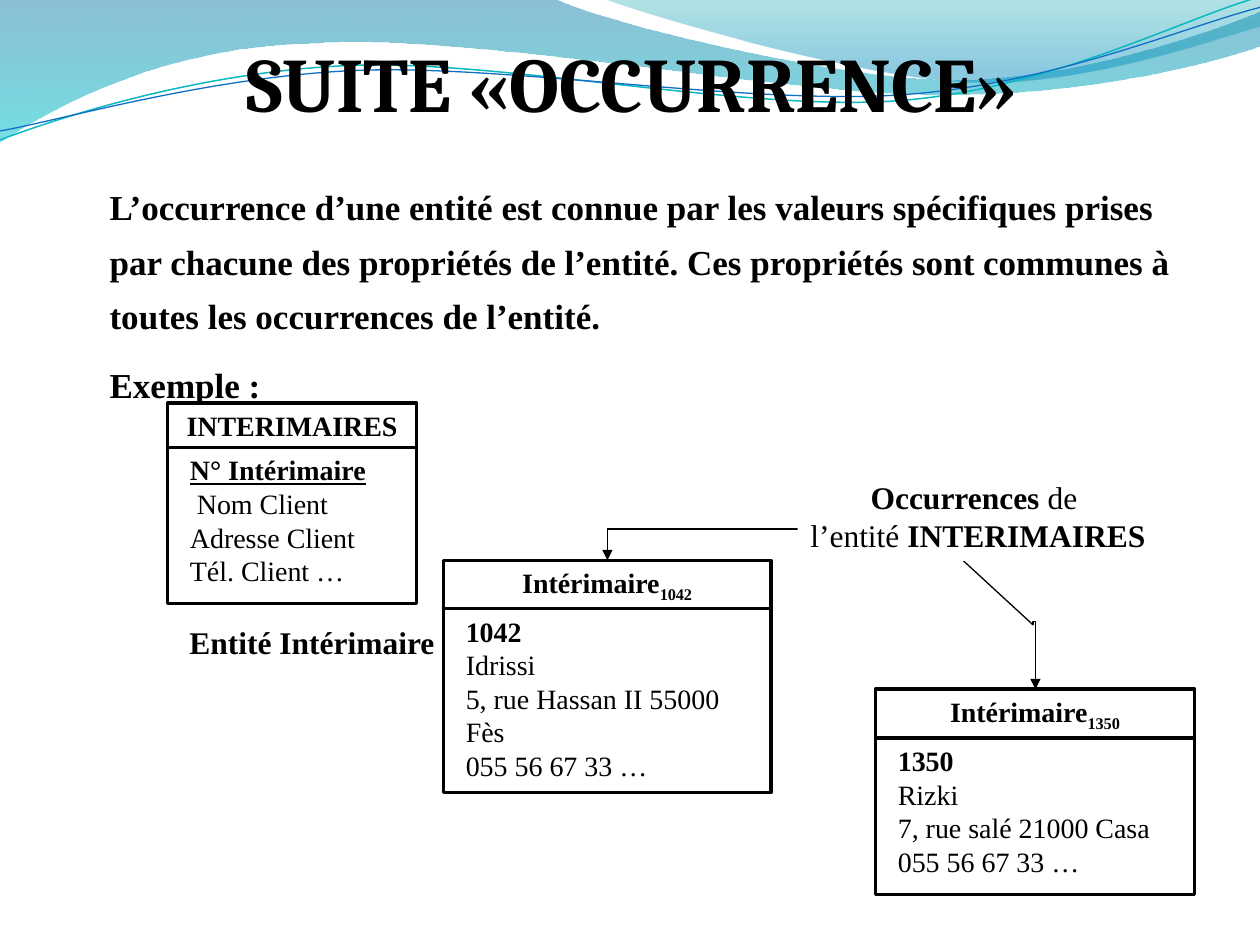
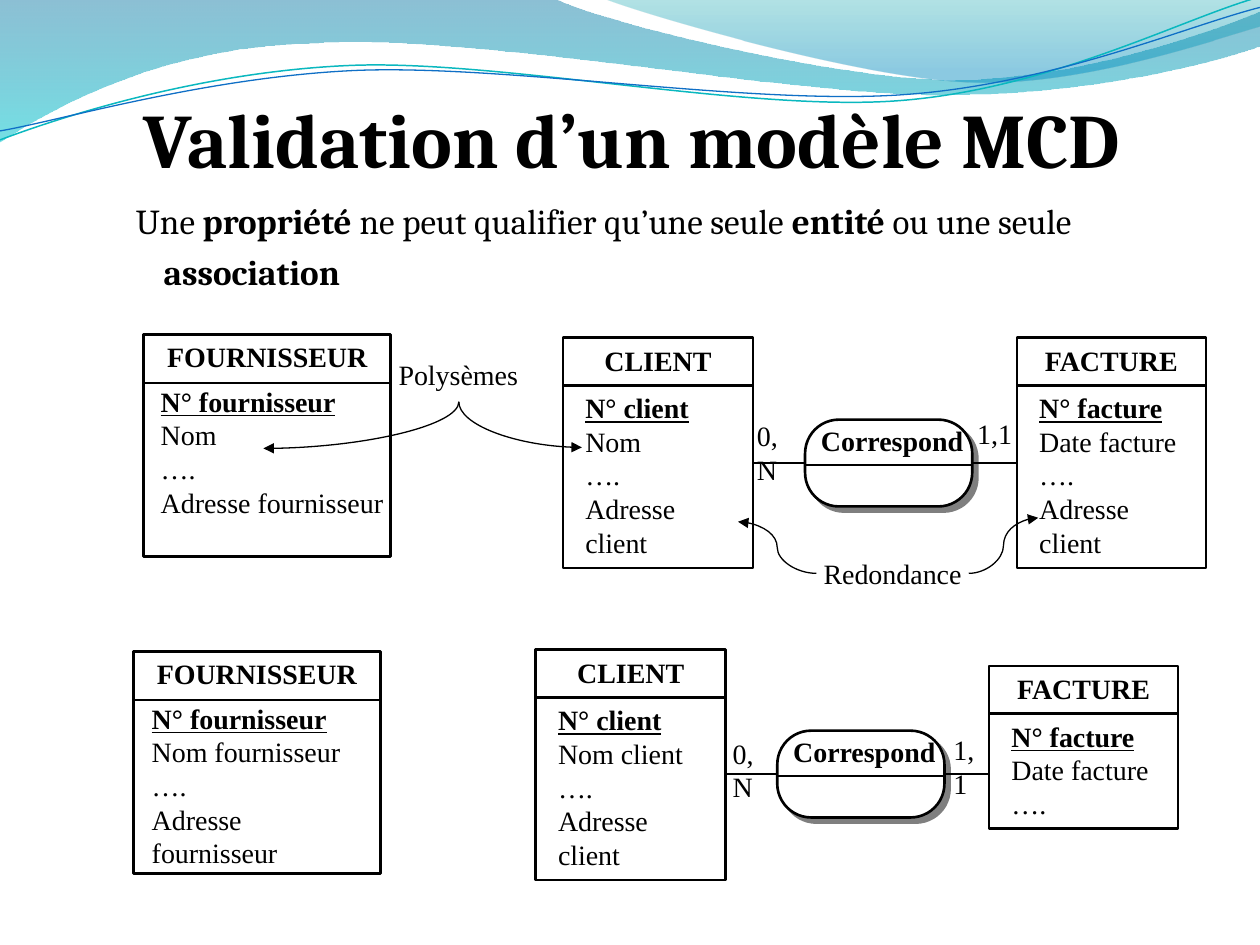
from math import cos, radians, sin
from lxml.etree import SubElement
from pptx import Presentation
from pptx.dml.color import RGBColor
from pptx.enum.shapes import MSO_CONNECTOR as Link, MSO_SHAPE as Preset
from pptx.enum.text import MSO_ANCHOR as Anchor, PP_ALIGN as Align
from pptx.oxml.ns import qn
from pptx.util import Cm, Pt

BLACK, WHITE = "000000", "FFFFFF"
SERIF, TITLE_FONT = "Times New Roman", "Cambria"
ROW_INDENT = (0.23, 0)
WAVE_TILT = 2.7

BANDS = [
    {"stops": [(0, "0074A1", 45), (1, "00C6CF", 55)], "start": (0, 0), "parts": [
        [(11.18, -0.03)],
        [(12.09, 0.43), (16.87, 1.6), (19.25, 1.6)],
        [(21.67, 1.6), (24.33, 0.66), (25.4, 0.23)],
        [(25.43, 0.91)],
        [(24.97, 1.12), (22.1, 1.93), (18.95, 1.91)],
        [(15.8, 1.91), (9.7, 0.71), (6.53, 0.86)],
        [(3.28, 0.91), (1.17, 2.11), (-0.03, 2.87)],
        [(0, 0)]]},
    {"stops": [(0, "00A1A9", 30), (0.8, "008BBF", 45)], "start": (12.17, -0.03), "parts": [
        [(12.93, 0.28), (17.32, 1.57), (19.53, 1.65)],
        [(21.74, 1.75), (24.41, 0.81), (25.4, 0.53)],
        [(25.4, 0)],
        [(12.17, -0.03)]]},
    {"line": ("0AB8BF", 0.85), "pivot": (12.67, 1.46), "start": (0, 2.82), "parts": [
        [(1.22, 2.36), (4.01, 1.45), (7.04, 1.32)],
        [(10.03, 1.19), (15.06, 2.26), (18.11, 2.03)],
        [(21.16, 1.8), (23.83, 0.38), (25.35, -0.05)]]},
    {"line": ("0F6FC6", 0.75), "pivot": (12.69, 1.5), "start": (0, 2.64), "parts": [
        [(1.19, 2.44), (4.17, 1.55), (7.19, 1.42)],
        [(10.24, 1.3), (15.16, 2.13), (18.21, 1.91)],
        [(21.23, 1.7), (23.9, 0.53), (25.4, 0.15)]]},
]

DEFINITION = [
    [("L’occurrence d’une entité est connue par les valeurs spécifiques prises par chacune "
      "des propriétés de l’entité. Ces propriétés sont communes à toutes les occurrences "
      "de l’entité.", "b")],
    [("Exemple :", "b")],
]
OCCURRENCES = [
    [("Occurrences", "b"), (" de ", "")],
    [("l’entité ", ""), ("INTERIMAIRES", "b")],
]
RULE = [[("Une ", ""), ("propriété", "b"), (" ne peut qualifier qu’une seule ", ""),
         ("entité", "b"), (" ou une seule ", ""), ("association", "b")]]

EXAMPLES = [
    {"head": [("INTERIMAIRES", "b")], "key": ("N° Intérimaire", "bu"),
     "rows": [" Nom Client", "Adresse Client", "Tél. Client …"],
     "at": (3.38, 8.13, 5.02), "heights": (0.89, 3.15)},
    {"head": [("Intérimaire", "b"), ("1042", "bs")], "key": ("1042", "b"),
     "rows": ["Idrissi", "5, rue Hassan II 55000 Fès", "055 56 67 33 …"],
     "at": (8.94, 11.3, 6.6), "heights": (0.97, 3.71)},
    {"head": [("Intérimaire", "b"), ("1350", "bs")], "key": ("1350", "b"),
     "rows": ["Rizki", "7, rue salé 21000 Casa", "055 56 67 33 …"],
     "at": (17.65, 13.89, 6.43), "heights": (0.99, 3.15)},
]


def supplier(name_row, at, side):
    return {"head": [("FOURNISSEUR", "b")], "key": ("N° fournisseur", "bu"),
            "rows": [name_row, "….", "Adresse fournisseur"],
            "at": at, "heights": (0.98, 3.5), "inset": (side, 0.03)}


def client(name_row, at):
    return {"head": [("CLIENT", "b")], "key": ("N° client", "bu"),
            "rows": [name_row, "….", "Adresse client"],
            "at": at, "heights": (0.96, 3.68)}


def invoice(extra_rows, at, body_height):
    return {"head": [("FACTURE", "b")], "key": ("N° facture", "bu"),
            "rows": ["Date facture", "…."] + extra_rows,
            "at": at, "heights": (0.96, body_height)}


MODELS = [
    {"entities": [client("Nom", (11.35, 6.81, 3.83)),
                  invoice(["Adresse client"], (20.5, 6.81, 3.81), 3.68),
                  supplier("Nom", (2.9, 6.74, 4.98), 0.11)],
     "association": (16.23, 8.46),
     "labels": [("0,N", 15.04, 8.33, 1.2), ("1,1", 19.48, 8.28, 1.2)]},
    {"entities": [client("Nom client", (10.8, 13.1, 3.83)),
                  invoice([], (19.94, 13.43, 3.81), 2.31),
                  supplier("Nom fournisseur", (2.69, 13.13, 4.98), 0.14)],
     "association": (15.67, 14.73),
     "labels": [("0,N", 14.55, 14.73, 1.2), ("1,1", 19, 14.66, 1.1)]},
]
REMARKS = [("Redondance", (16.46, 10.72, 3.07, 1.68)),
           ("Polysèmes", (7.87, 6.99, 2.74, 1.12))]
OCCURRENCE_ARROWS = [
    ((14.46, 7.76), (15.78, 13.51), "bentConnector5", 90, (47600, 21300, 52400)),
    ((21.5, 13.22), (20.2, 13.27), "bentConnector3", 270, (-5300,)),
]
REMARK_ARROWS = [
    ((16.46, 11.56), (14.88, 10.52), "curvedConnector3", 0, (50000,)),
    ((19.53, 11.56), (20.93, 10.44), "curvedConnector3", 0, (50000,)),
    ((6.81, 6.6), (7.75, 10.54), "curvedConnector2", 90, ()),
    ((10.95, 7.32), (10.03, 9.8), "curvedConnector2", 270, ()),
]


def color(value):
    return RGBColor.from_string(value)


def set_all(target, values):
    for name, value in values.items():
        setattr(target, name, value)


def write(shape, lines, size=16, font=SERIF, inset=(0.22, 0.11), wrap=True,
          anchor=Anchor.TOP, indent=(0, 0), **layout):
    side, edge = map(Cm, inset)
    frame = shape.text_frame
    set_all(frame, {"word_wrap": wrap, "vertical_anchor": anchor,
                    "margin_left": side, "margin_right": side,
                    "margin_top": edge, "margin_bottom": edge})
    for number, spans in enumerate(lines):
        para = frame.add_paragraph() if number else frame.paragraphs[0]
        set_all(para, {"alignment": Align.LEFT, **layout})
        for name, length in zip(("marL", "indent"), indent):
            para._p.get_or_add_pPr().set(name, str(int(Cm(length))))
        for text, flags in spans:
            span = para.add_run()
            span.text = text
            set_all(span.font, {"name": font, "size": Pt(size), "bold": "b" in flags,
                                "underline": "u" in flags})
            span.font.color.rgb = color(BLACK)
            if "s" in flags:
                span.font._element.set("baseline", "-25000")


def add_box(page, preset, place, fill=WHITE, line=None):
    box = page.shapes.add_shape(preset, *map(Cm, place))
    box.shadow.inherit = False
    if fill:
        box.fill.solid()
        box.fill.fore_color.rgb = color(fill)
    else:
        box.fill.background()
    if line:
        box.line.color.rgb = color(BLACK)
        box.line.width = Pt(line)
    else:
        box.line.fill.background()
    return box


def add_text(page, place, lines, **layout):
    box = page.shapes.add_textbox(*map(Cm, place))
    write(box, lines, **layout)


def add_link(page, start, end, width=0.75):
    link = page.shapes.add_connector(Link.STRAIGHT, *map(Cm, (*start, *end)))
    link.line.color.rgb = color(BLACK)
    link.line.width = Pt(width)
    SubElement(link._element.spPr, qn("a:effectLst"))
    return link


def add_arrow(page, start, end, geometry, turn, bends):
    properties = add_link(page, start, end)._element.spPr
    SubElement(properties.find(qn("a:ln")), qn("a:tailEnd"), type="triangle")
    properties.find(qn("a:xfrm")).set("rot", str(turn * 60000))
    preset = properties.find(qn("a:prstGeom"))
    preset.set("prst", geometry)
    for number, bend in enumerate(bends, 1):
        SubElement(preset.find(qn("a:avLst")), qn("a:gd"),
                   name=f"adj{number}", fmla=f"val {bend}")


def turned(point, pivot):
    x, y = point[0] - pivot[0], point[1] - pivot[1]
    angle = radians(WAVE_TILT)
    return (pivot[0] + x * cos(angle) - y * sin(angle),
            pivot[1] + x * sin(angle) + y * cos(angle))


def bend_segments(wave, parts):
    segments = list(wave._element.spPr.iter(qn("a:lnTo")))
    for part in parts:
        group, segments = segments[:len(part)], segments[len(part):]
        if len(part) == 3:
            curve = group[0].getparent().makeelement(qn("a:cubicBezTo"))
            group[0].addprevious(curve)
            for segment in group:
                curve.append(segment[0])
                segment.getparent().remove(segment)


def add_band(page, band):
    points = [band["start"]] + [point for part in band["parts"] for point in part]
    if "pivot" in band:
        points = [turned(point, band["pivot"]) for point in points]
    first, *others = [(Cm(x), Cm(y)) for x, y in points]
    builder = page.shapes.build_freeform(*first, scale=1.0)
    builder.add_line_segments(others, close="stops" in band)
    wave = builder.convert_to_shape()
    bend_segments(wave, band["parts"])
    wave.shadow.inherit = False
    if "line" in band:
        wave.rotation = -WAVE_TILT
        wave.fill.background()
        value, width = band["line"]
        wave.line.color.rgb = color(value)
        wave.line.width = Pt(width)
        return
    wave.line.fill.background()
    wave.fill.gradient()
    wave.fill.gradient_angle = 270
    for stop, (position, value, _) in zip(wave.fill.gradient_stops, band["stops"]):
        stop.position = position
        stop.color.rgb = color(value)
    for node, (_, _, opacity) in zip(wave._element.spPr.iter(qn("a:srgbClr")), band["stops"]):
        SubElement(node, qn("a:alpha"), val=str(opacity * 1000))


def add_page(deck):
    page = deck.slides.add_slide(deck.slide_layouts[6])
    for band in BANDS:
        add_band(page, band)
    return page


def add_title(page, text, top, height, anchor):
    add_text(page, (1.35, top, 22.8, height), [[(text, "b")]], size=44, font=TITLE_FONT,
             inset=(0, 0.13), anchor=anchor, alignment=Align.CENTER)


def add_entity(page, entity, line):
    left, top, width = entity["at"]
    head_height, body_height = entity["heights"]
    inset = entity.get("inset", (0.22, 0.11))
    head = add_box(page, Preset.RECTANGLE, (left, top, width, head_height), line=line)
    write(head, [entity["head"]], inset=(inset[0], 0.11), alignment=Align.CENTER)
    body = add_box(page, Preset.RECTANGLE, (left, top + head_height, width, body_height),
                   line=line)
    rows = [[entity["key"]]] + [[(row, "")] for row in entity["rows"]]
    write(body, rows, inset=inset, indent=ROW_INDENT)


def add_association(page, place, client_edge, invoice_edge):
    left, top = place
    width, height = 3.37, 1.75
    middle = top + height / 2
    box = add_box(page, Preset.ROUNDED_RECTANGLE, (left, top, width, height), line=1.5)
    box.adjustments[0] = 0.39
    shadow = SubElement(box._element.spPr.find(qn("a:effectLst")), qn("a:outerShdw"),
                        dist=str(int(Pt(4.2))), dir="2700000", algn="ctr", rotWithShape="0")
    shade = SubElement(shadow, qn("a:srgbClr"), val=BLACK)
    SubElement(shade, qn("a:alpha"), val="50000")
    add_text(page, (left + 0.1, top - 0.03, 3.33, 0.91), [[("Correspond", "b")]], wrap=False)
    add_link(page, (left, middle + 0.04), (left + width, middle + 0.04), width=1.5)
    add_link(page, (client_edge, middle), (left, middle)).end_connect(box, 1)
    add_link(page, (left + width, middle), (invoice_edge, middle)).begin_connect(box, 3)


def build_occurrence(deck):
    page = add_page(deck)
    add_text(page, (1.99, 3.38, 22.48, 4.9), DEFINITION, size=20, line_spacing=1.3,
             space_before=Pt(4), space_after=Pt(4))
    for entity in EXAMPLES:
        add_entity(page, entity, 2)
    add_text(page, (3.6, 12.45, 5.46, 0.99), [[("Entité Intérimaire", "b")]],
             size=18, wrap=False)
    for arrow in OCCURRENCE_ARROWS:
        add_arrow(page, *arrow)
    add_link(page, (17.98, 9.98), (20.83, 12.6))
    caption = add_box(page, Preset.RECTANGLE, (16.08, 9.53, 7.27, 1.78))
    write(caption, OCCURRENCES, size=18, wrap=False, alignment=Align.CENTER)
    add_title(page, "SUITE «OCCURRENCE»", 0.58, 4.01, Anchor.TOP)


def build_validation(deck):
    page = add_page(deck)
    add_title(page, "Validation d’un modèle MCD", 1.19, 3.18, Anchor.MIDDLE)
    add_text(page, (1.27, 3.73, 24.13, 13.84), RULE, size=20, font=TITLE_FONT,
             inset=(0.25, 0.13), indent=(1.78, -0.56), line_spacing=1.2,
             space_before=Pt(2), space_after=Pt(2))
    for model in MODELS:
        for entity in model["entities"]:
            add_entity(page, entity, 1.5)
        (left, _, width), (invoice_edge, _, _) = (e["at"] for e in model["entities"][:2])
        add_association(page, model["association"], left + width, invoice_edge)
        for text, left, top, width in model["labels"]:
            add_text(page, (left, top, width, 0.91), [[(text, "")]])
    for text, place in REMARKS:
        remark = add_box(page, Preset.OVAL, place, fill=None)
        write(remark, [[(text, "")]], inset=(0.05, 0.1), wrap=False,
              anchor=Anchor.MIDDLE, alignment=Align.CENTER)
    for arrow in REMARK_ARROWS:
        add_arrow(page, *arrow)


def main():
    deck = Presentation()
    set_all(deck, {"slide_width": Cm(25.4), "slide_height": Cm(19.05)})
    build_occurrence(deck)
    build_validation(deck)
    deck.save("out.pptx")


if __name__ == "__main__":
    main()
